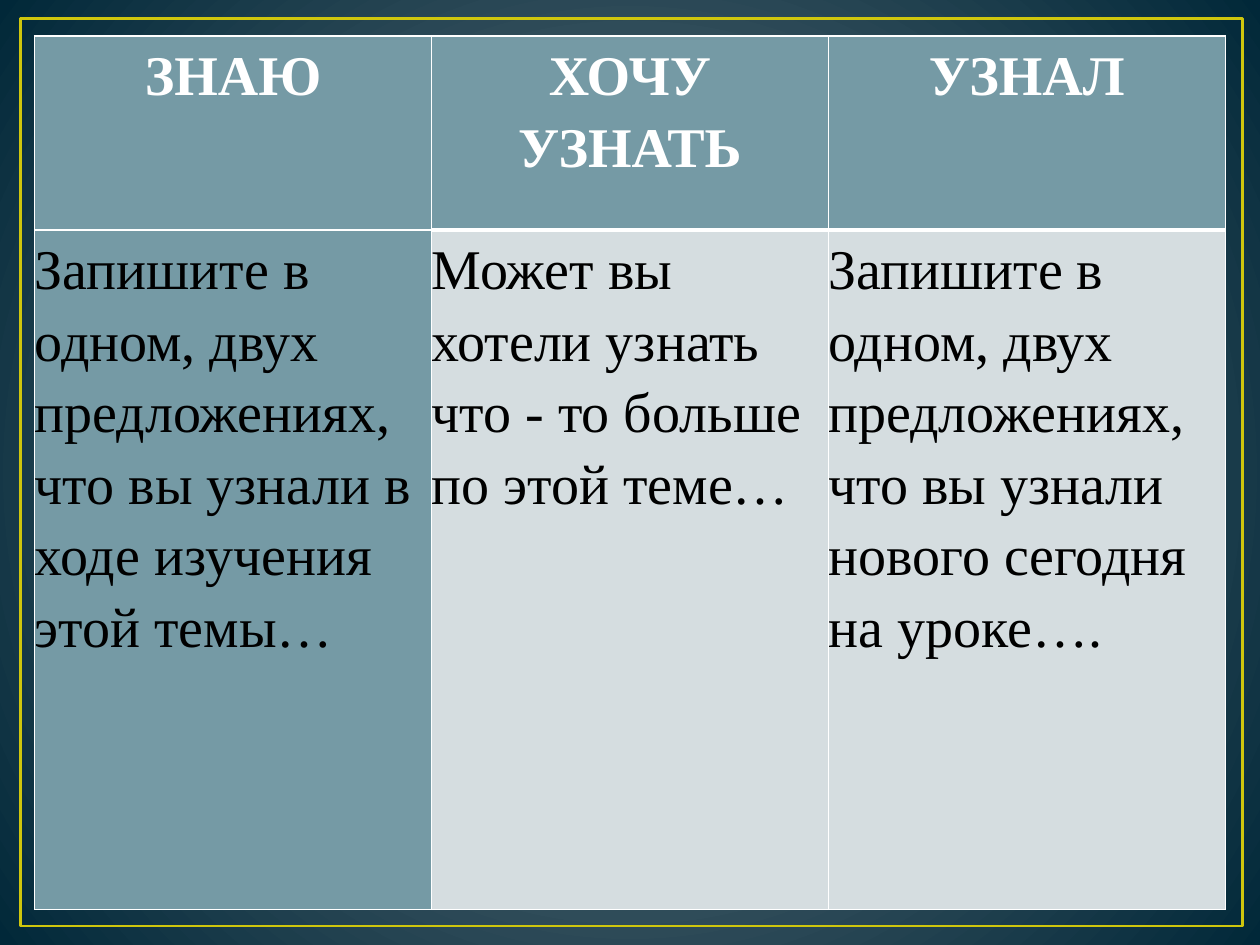
"""Build a three-column reflection table: known, wanted, learned."""
from dataclasses import dataclass

import lxml.etree
import pptx
import pptx.dml.color
import pptx.enum.shapes
import pptx.enum.text
import pptx.oxml.ns
import pptx.util

Cm = pptx.util.Cm
Pt = pptx.util.Pt
RGBColor = pptx.dml.color.RGBColor
PP_ALIGN = pptx.enum.text.PP_ALIGN
qn = pptx.oxml.ns.qn

WHITE = RGBColor(0xFF, 0xFF, 0xFF)
BLACK = RGBColor(0x00, 0x00, 0x00)
TEAL = RGBColor(0x75, 0x9A, 0xA5)
PALE = RGBColor(0xD5, 0xDD, 0xE0)
GOLD = RGBColor(0xCF, 0xC6, 0x0D)
GLOW = RGBColor(0x6C, 0x7A, 0x82)
NAVY = RGBColor(0x01, 0x28, 0x39)

THIN, THICK = Pt(1), Pt(3)
FONT = "Times New Roman"


@dataclass(frozen=True)
class Column:
    heading: str
    prompt: str
    prompt_fill: RGBColor
    divider: int


COLUMNS = [
    Column(
        "ЗНАЮ",
        "Запишите в одном, двух предложениях, что вы узнали в ходе изучения этой темы…",
        TEAL,
        THIN,
    ),
    Column("ХОЧУ УЗНАТЬ", "Может вы хотели узнать что - то больше по этой теме…", PALE, THICK),
    Column(
        "УЗНАЛ",
        "Запишите в одном, двух предложениях, что вы узнали нового сегодня на уроке….",
        PALE,
        THICK,
    ),
]


def paint_background(slide) -> None:
    fill = slide.background.fill
    fill.gradient()
    for stop, color, position in zip(fill.gradient_stops, (GLOW, NAVY), (0, 1)):
        stop.color.rgb = color
        stop.position = position
    gradient = slide.element.find(".//" + qn("a:gradFill"))
    linear = gradient.find(qn("a:lin"))
    radial = lxml.etree.Element(qn("a:path"), path="circle")
    lxml.etree.SubElement(
        radial, qn("a:fillToRect"), dict.fromkeys("ltrb", "50000")
    )
    gradient.replace(linear, radial)


def draw_frame(slide) -> None:
    frame = slide.shapes.add_shape(
        pptx.enum.shapes.MSO_SHAPE.RECTANGLE, Cm(0.41), Cm(0.38), Cm(24.64), Cm(18.29)
    )
    frame.shadow.inherit = False
    frame.fill.background()
    frame.line.color.rgb = GOLD
    frame.line.width = Pt(1.5)


def write(text_frame, text: str, *, color: RGBColor, bold: bool, align: PP_ALIGN) -> None:
    paragraph = text_frame.paragraphs[0]
    paragraph.alignment = align
    paragraph.line_spacing = 1.15
    run = paragraph.add_run()
    run.text = text
    run.font.name = FONT
    run.font.size = Pt(32)
    run.font.bold = bold
    run.font.color.rgb = color


def style_cell(cell, fill: RGBColor, top: int, bottom: int) -> None:
    cell.margin_left = cell.margin_right = cell.margin_top = cell.margin_bottom = 0
    properties = cell._tc.get_or_add_tcPr()
    for side, width in zip("LRTB", (THIN, THIN, top, bottom)):
        border = lxml.etree.SubElement(properties, qn(f"a:ln{side}"), w=str(width))
        solid = lxml.etree.SubElement(border, qn("a:solidFill"))
        lxml.etree.SubElement(solid, qn("a:srgbClr"), val=str(WHITE))
    cell.fill.solid()
    cell.fill.fore_color.rgb = fill


def draw_table(slide, columns: list[Column]) -> None:
    table = slide.shapes.add_table(
        2, len(columns), Cm(0.7), Cm(0.73), Cm(24), Cm(17.6)
    ).table
    table.rows[0].height = Cm(3.91)
    table.rows[1].height = Cm(13.69)
    for index, column in enumerate(columns):
        table.columns[index].width = Cm(8)
        heading, prompt = table.cell(0, index), table.cell(1, index)
        style_cell(heading, TEAL, top=THIN, bottom=column.divider)
        style_cell(prompt, column.prompt_fill, top=column.divider, bottom=THIN)
        write(heading.text_frame, column.heading, color=WHITE, bold=True, align=PP_ALIGN.CENTER)
        write(prompt.text_frame, column.prompt, color=BLACK, bold=False, align=PP_ALIGN.LEFT)


def main() -> None:
    presentation = pptx.Presentation()
    presentation.slide_width = Cm(25.4)
    presentation.slide_height = Cm(19.05)
    slide = presentation.slides.add_slide(presentation.slide_layouts[6])
    paint_background(slide)
    draw_frame(slide)
    draw_table(slide, COLUMNS)
    presentation.save("out.pptx")


if __name__ == "__main__":
    main()
